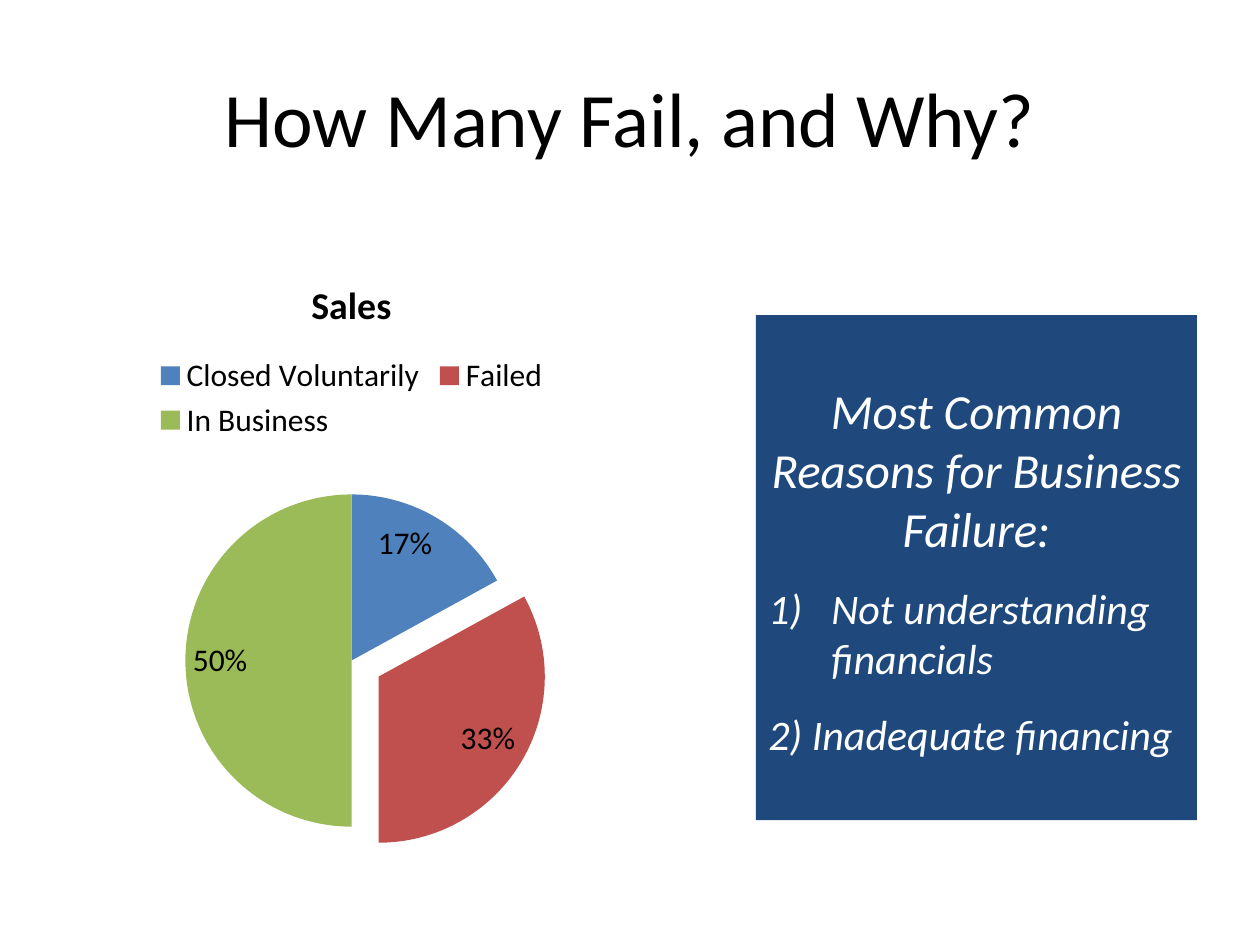
from lxml.etree import SubElement
from pptx import Presentation
from pptx.chart.data import CategoryChartData
from pptx.dml.color import RGBColor
from pptx.enum.chart import XL_CHART_TYPE as Kind, XL_LABEL_POSITION as Spot, XL_LEGEND_POSITION as Side
from pptx.enum.shapes import MSO_SHAPE as Shape
from pptx.enum.text import MSO_ANCHOR as Anchor, PP_ALIGN as Align
from pptx.oxml.ns import qn
from pptx.util import Inches, Pt

BLACK = RGBColor(0, 0, 0)
WHITE = RGBColor(255, 255, 255)
NAVY = RGBColor(0x1F, 0x49, 0x7D)
BLUE = RGBColor(0x4F, 0x81, 0xBD)
RED = RGBColor(0xC0, 0x50, 0x4D)
GREEN = RGBColor(0x9B, 0xBB, 0x59)

TITLE = "How Many Fail, and Why?"
SERIES = "Sales"
SLICES = [
    ("Closed Voluntarily", 17, BLUE),
    ("Failed", 33, RED),
    ("In Business", 50, GREEN),
]
BURST = 1
REASONS = [
    ("Most Common Reasons for Business Failure:", 28, Align.CENTER, 0, False),
    ("Not understanding financials", 24, Align.LEFT, 14.6, True),
    ("2) Inadequate financing", 24, Align.LEFT, 14.6, False),
]


def style(font, size, color):
    font.name = "Calibri"
    font.size = Pt(size)
    font.color.rgb = color


def box(*sides):
    return [Inches(side) for side in sides]


def add_title(slide):
    title = slide.shapes.title
    title.left, title.top, title.width, title.height = box(0.5, 0.3, 9, 1.25)
    title.text_frame.text = TITLE
    title.text_frame.vertical_anchor = Anchor.MIDDLE
    para = title.text_frame.paragraphs[0]
    para.alignment = Align.CENTER
    style(para.font, 44, BLACK)


def add_pie(slide):
    data = CategoryChartData()
    data.categories = [name for name, _, _ in SLICES]
    data.add_series(SERIES, [value for _, value, _ in SLICES])
    chart = slide.shapes.add_chart(Kind.PIE, *box(-0.5, 2, 6.58, 4.95), data).chart
    style(chart.font, 18, BLACK)

    chart.has_title = True
    chart.chart_title.text_frame.text = SERIES
    head = chart.chart_title.text_frame.paragraphs[0].font
    style(head, 21.6, BLACK)
    head.bold = True

    chart.has_legend = True
    chart.legend.position = Side.TOP
    chart.legend.include_in_layout = False

    plot = chart.plots[0]
    plot.vary_by_categories = True
    plot.has_data_labels = True
    labels = plot.data_labels
    labels.show_percentage = True
    labels.show_value = False
    labels.number_format = "0%"
    labels.number_format_is_linked = False
    labels.position = Spot.INSIDE_END
    style(labels.font, 18, BLACK)

    series = plot.series[0]
    for i, (_, _, color) in enumerate(SLICES):
        fill = series.points[i].format.fill
        fill.solid()
        fill.fore_color.rgb = color
    point = series._element.findall(qn("c:dPt"))[BURST]
    burst = SubElement(point, qn("c:explosion"))
    burst.set("val", "19")
    point.find(qn("c:spPr")).addprevious(burst)


def add_panel(slide):
    panel = slide.shapes.add_shape(Shape.RECTANGLE, *box(6, 2.5, 3.5, 4.01))
    panel.shadow.inherit = False
    panel.fill.solid()
    panel.fill.fore_color.rgb = NAVY
    panel.line.fill.background()
    frame = panel.text_frame
    frame.word_wrap = True
    frame.vertical_anchor = Anchor.TOP
    frame.margin_top = Inches(0.52)
    for i, (text, size, align, gap, numbered) in enumerate(REASONS):
        para = frame.add_paragraph() if i else frame.paragraphs[0]
        para.text = text
        para.alignment = align
        para.space_before = Pt(gap)
        if numbered:
            props = para._p.get_or_add_pPr()
            props.set("marL", str(Inches(0.5)))
            props.set("indent", str(Inches(-0.5)))
            SubElement(props, qn("a:buFont")).set("typeface", "+mj-lt")
            SubElement(props, qn("a:buAutoNum")).set("type", "arabicParenR")
        style(para.font, size, WHITE)
        para.font.italic = True


def main():
    deck = Presentation()
    deck.slide_width, deck.slide_height = box(10, 7.5)
    slide = deck.slides.add_slide(deck.slide_layouts[5])
    add_title(slide)
    add_pie(slide)
    add_panel(slide)
    deck.save("out.pptx")


if __name__ == "__main__":
    main()
